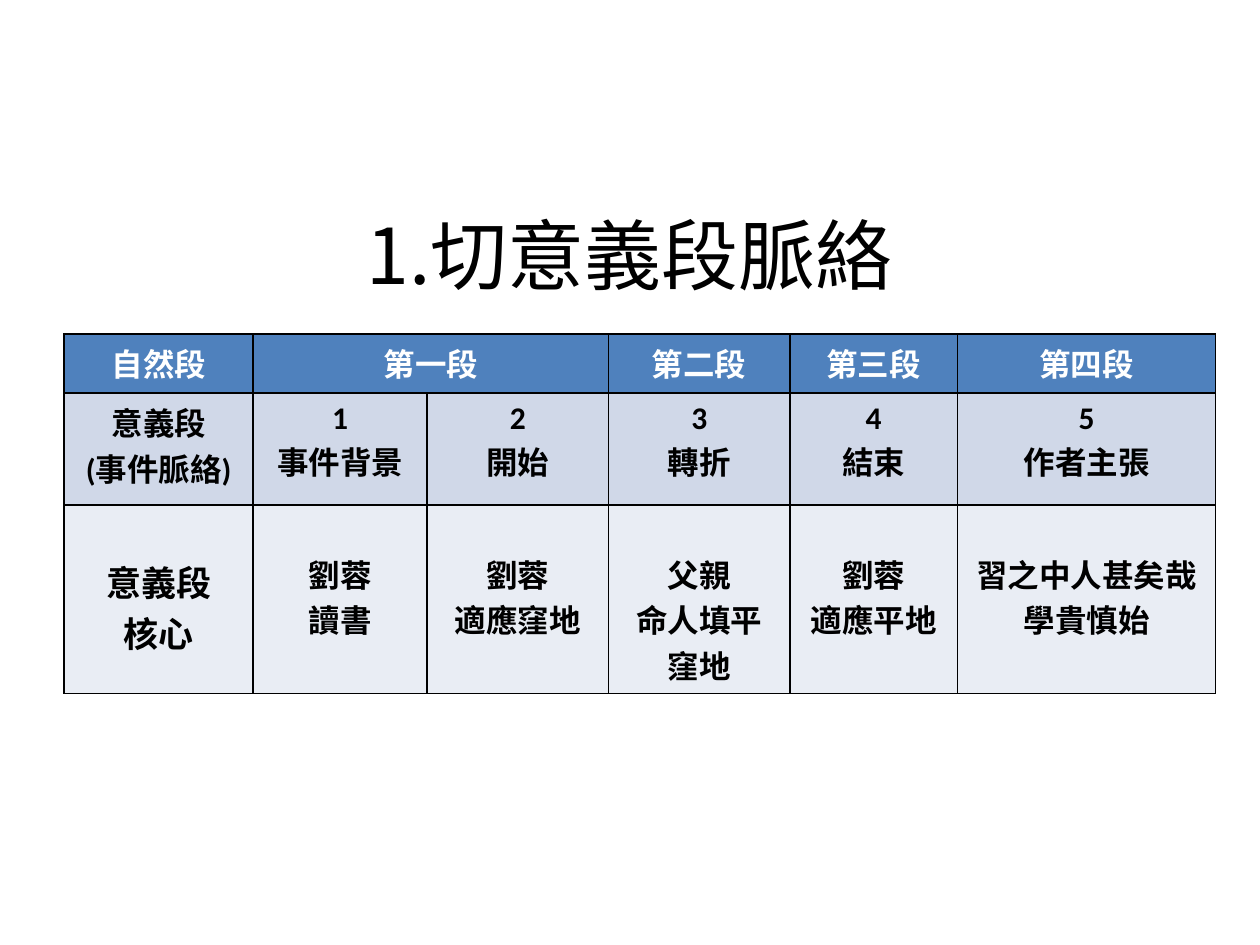
import pptx
import pptx.util
import pptx.dml.color
import pptx.enum.text
import pptx.oxml
import pptx.oxml.ns

Inches, Pt = pptx.util.Inches, pptx.util.Pt
CENTER = pptx.enum.text.PP_ALIGN.CENTER


def color(hex_string):
    return pptx.dml.color.RGBColor.from_string(hex_string)


def add_borders(cell):
    tcPr = cell._tc.get_or_add_tcPr()
    for i, side in enumerate("LRTB"):
        tcPr.insert(i, pptx.oxml.parse_xml(
            f'<a:ln{side} {pptx.oxml.ns.nsdecls("a")} w="12700">'
            '<a:solidFill><a:srgbClr val="000000"/></a:solidFill>'
            f'</a:ln{side}>'))


prs = pptx.Presentation()
prs.slide_width, prs.slide_height = Inches(10), Inches(7.5)
s = prs.slides.add_slide(prs.slide_layouts[5])

# Title
sp = s.shapes.title
sp.left, sp.top, sp.width, sp.height = Inches(0.43), Inches(1.39), Inches(9), Inches(1.25)
tf = sp.text_frame
tf.vertical_anchor = pptx.enum.text.MSO_ANCHOR.MIDDLE
p = tf.paragraphs[0]
p.alignment = CENTER
r = p.add_run()
r.text = " 1.切意義段脈絡"
r.font.size = Pt(44)
r.font.name = "Noto Sans CJK SC"
r.font.color.rgb = color("000000")

# Table: each cell is a list of lines
rows = [
    [["自然段"], ["第一段"], [], ["第二段"], ["第三段"], ["第四段"]],
    [["意義段", "(事件脈絡)"], ["1", "事件背景"], ["2", "開始"],
     ["3", "轉折"], ["4", "結束"], ["5", "作者主張"]],
    [["意義段", "核心"], ["劉蓉", "讀書"], ["劉蓉", "適應窪地"],
     ["父親", "命人填平窪地"], ["劉蓉", "適應平地"], ["習之中人甚矣哉", "學貴慎始"]],
]
col_widths = [1.5, 1.38, 1.44, 1.44, 1.33, 2.05]
row_heights = [0.47, 0.89, 1.3]
row_styles = [("4F81BD", "FFFFFF"), ("D0D8E8", "000000"), ("E9EDF4", "000000")]

table = s.shapes.add_table(len(rows), len(col_widths), Inches(0.51), Inches(2.65),
                           Inches(9.14), Inches(2.66)).table
for column, width in zip(table.columns, col_widths):
    column.width = Inches(width)
for row, height in zip(table.rows, row_heights):
    row.height = Inches(height)
table.cell(0, 1).merge(table.cell(0, 2))

for i, (row, (fill, text_color)) in enumerate(zip(rows, row_styles)):
    for j, lines in enumerate(row):
        cell = table.cell(i, j)
        cell.fill.solid()
        cell.fill.fore_color.rgb = color(fill)
        add_borders(cell)
        size = 20 if (i, j) == (2, 0) else 18
        if i == 2:
            # The core row starts one text line lower
            cell.margin_top = Inches(0.02 * size)
        for k, line in enumerate(lines):
            tf = cell.text_frame
            p = tf.add_paragraph() if k else tf.paragraphs[0]
            p.alignment = CENTER
            r = p.add_run()
            r.text = line
            r.font.size = Pt(size)
            r.font.name = "Calibri"
            r.font.bold = True
            r.font.color.rgb = color(text_color)

prs.save("out.pptx")
